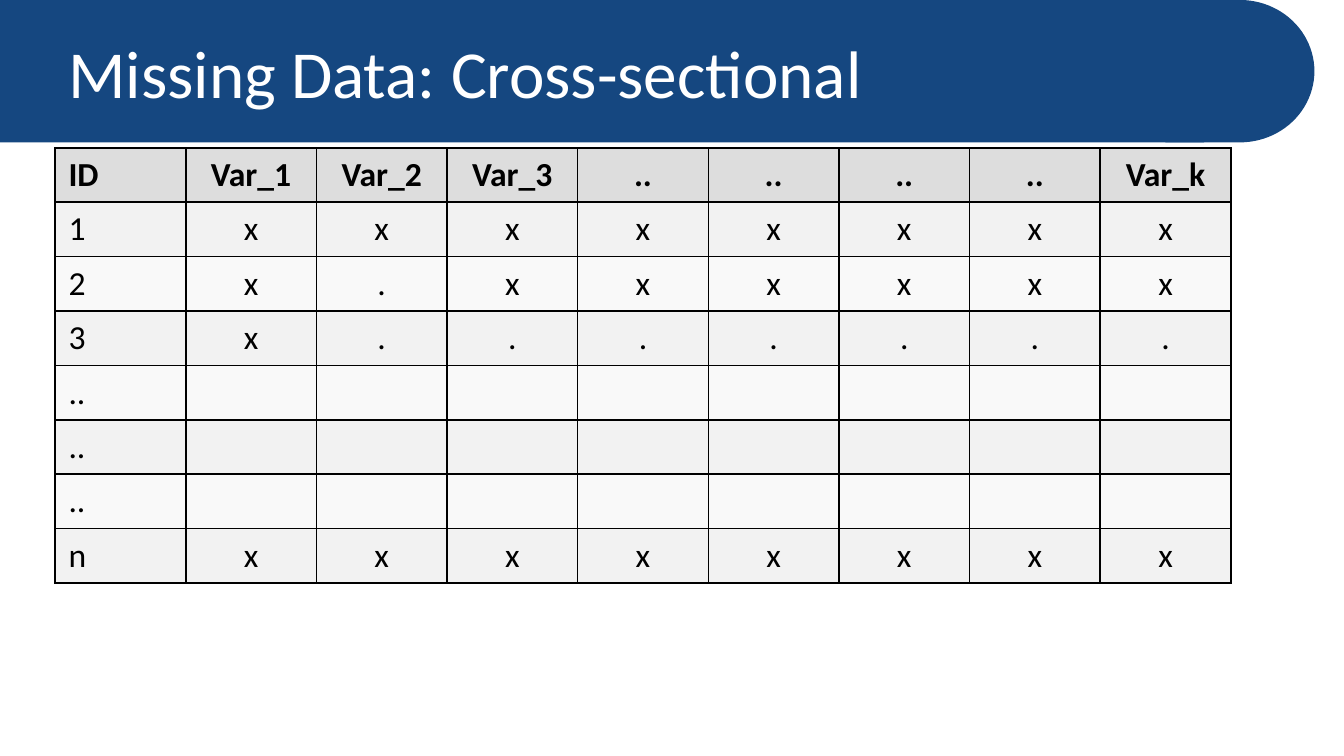
from lxml.etree import SubElement
from pptx import Presentation
from pptx.dml.color import RGBColor
from pptx.enum.shapes import MSO_SHAPE as Shape
from pptx.enum.text import MSO_ANCHOR as Anchor, PP_ALIGN as Align
from pptx.oxml.ns import qn
from pptx.util import Inches, Pt

NAVY = RGBColor(0x15, 0x47, 0x80)
WHITE = RGBColor(0xFF, 0xFF, 0xFF)
BLACK = RGBColor(0x00, 0x00, 0x00)
HEADER_GRAY = RGBColor(0xDD, 0xDD, 0xDD)
BAND_GRAYS = (RGBColor(0xF9, 0xF9, 0xF9), RGBColor(0xF2, 0xF2, 0xF2))

TITLE_FORMAT = {"name": "Calibri", "size": Pt(36)}
CELL_FORMAT = {"name": "Calibri", "size": Pt(18)}

LEFT, CONTENT_WIDTH = 0.41, 8.75
BANNER_HEIGHT = 1.06
TABLE_TOP, TABLE_HEIGHT = 1.1, 3.24

# One string per row, one word per cell; short rows leave the rest empty
ROWS = [row.split() for row in (
    "ID Var_1 Var_2 Var_3 .. .. .. .. Var_k",
    "1 x x x x x x x x",
    "2 x . x x x x x x",
    "3 x . . . . . . .",
    "..",
    "..",
    "..",
    "n x x x x x x x x",
)]


def format_font(font, color, values):
    for attribute, value in values.items():
        setattr(font, attribute, value)
    font.color.rgb = color


def add_banner_part(slide, kind, left, width):
    part = slide.shapes.add_shape(
        kind, Inches(left), 0, Inches(width), Inches(BANNER_HEIGHT))
    part.shadow.inherit = False
    part.fill.solid()
    part.fill.fore_color.rgb = NAVY
    part.line.fill.background()


def add_title(slide, text):
    title = slide.shapes.add_textbox(
        Inches(LEFT), Inches(0.06), Inches(CONTENT_WIDTH), Inches(0.94))
    frame = title.text_frame
    frame.word_wrap = True
    frame.vertical_anchor = Anchor.MIDDLE
    run = frame.paragraphs[0].add_run()
    run.text = text
    format_font(run.font, WHITE, TITLE_FORMAT)


def add_borders(cell):
    properties = cell._tc.get_or_add_tcPr()
    for side in ("a:lnL", "a:lnR", "a:lnT", "a:lnB"):
        border = SubElement(properties, qn(side), w=str(Pt(1)))
        fill = SubElement(border, qn("a:solidFill"))
        SubElement(fill, qn("a:srgbClr"), val=str(BLACK))


def fill_cell(cell, text, row, column):
    # Borders come before the fill in the cell's XML
    add_borders(cell)
    cell.fill.solid()
    cell.fill.fore_color.rgb = BAND_GRAYS[row % 2] if row else HEADER_GRAY
    paragraph = cell.text_frame.paragraphs[0]
    paragraph.alignment = Align.CENTER if column else Align.LEFT
    if text:
        run = paragraph.add_run()
        run.text = text
        format_font(run.font, BLACK, {**CELL_FORMAT, "bold": row == 0})


def add_data_table(slide):
    column_count = len(ROWS[0])
    table = slide.shapes.add_table(
        len(ROWS), column_count, Inches(LEFT), Inches(TABLE_TOP),
        Inches(CONTENT_WIDTH), Inches(TABLE_HEIGHT)).table
    for row, words in enumerate(ROWS):
        for column in range(column_count):
            text = words[column] if column < len(words) else ""
            fill_cell(table.cell(row, column), text, row, column)


def main():
    # Widescreen slide, 16:9
    deck = Presentation()
    deck.slide_width = Inches(10)
    deck.slide_height = Inches(10) * 9 // 16
    slide = deck.slides.add_slide(deck.slide_layouts[6])

    # Title banner with a rounded right end
    add_banner_part(slide, Shape.FLOWCHART_DELAY, 8.67, 1.11)
    add_banner_part(slide, Shape.RECTANGLE, 0, 8.96)
    add_title(slide, "Missing Data: Cross-sectional")

    # Observations by variable
    add_data_table(slide)

    deck.save("out.pptx")


if __name__ == "__main__":
    main()
